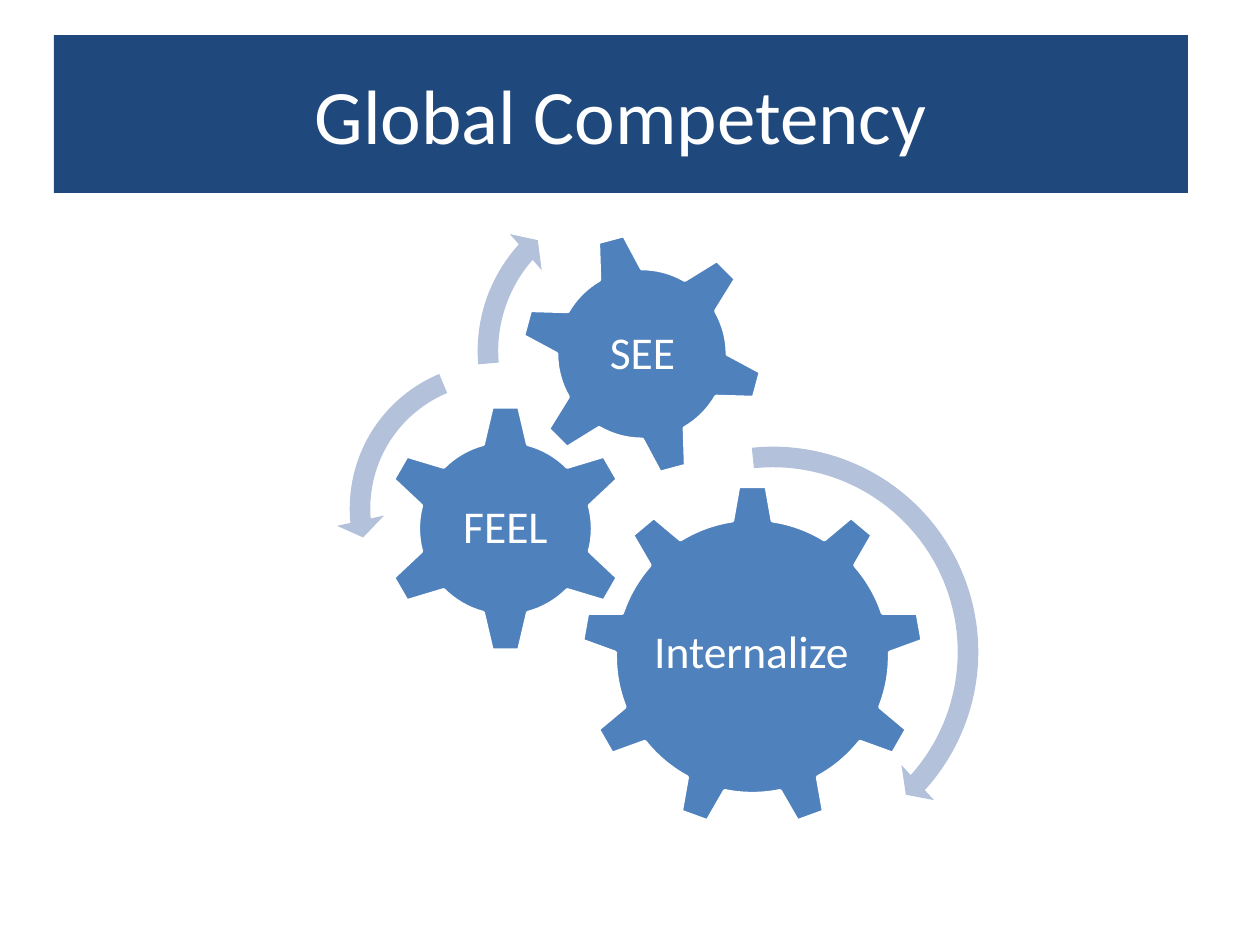
from pptx import Presentation
from pptx.dml.color import RGBColor
from pptx.enum.shapes import MSO_SHAPE as SHAPE
from pptx.enum.text import MSO_ANCHOR as ANCHOR, PP_ALIGN as ALIGN
from pptx.util import Emu, Inches, Pt

PX = Inches(1) // 126
NAVY = RGBColor(0x1F, 0x49, 0x7D)
BLUE = RGBColor(0x4F, 0x81, 0xBD)
PALE = RGBColor(0xB3, 0xC1, 0xDB)
WHITE = RGBColor(0xFF, 0xFF, 0xFF)

# Gear: shape, rotation, left, top, size, label, label box inside the gear
GEARS = [
    (SHAPE.GEAR_9, 0, 245, 306, 343, "Internalize", (68, 81, 205, 176)),
    (SHAPE.GEAR_6, 0, 45, 225, 249, "FEEL", (63, 63, 123, 123)),
    (SHAPE.GEAR_6, 345, 184, 53, 244, "SEE", (54, 54, 137, 137)),
]
# Arrow: shape, left, top, size, adjustments
ARROWS = [
    (SHAPE.CIRCULAR_ARROW, 218, 254, 438, (0.0469, 2.99, 25.236, 158.454, 0.0547)),
    (SHAPE.LEFT_CIRCULAR_ARROW, 0, 170, 319, (0.0645, 4.3, 104.891, 148.378, 0.0753)),
    (SHAPE.CIRCULAR_ARROW, 128, 0, 344, (0.0598, 3.941, 133.138, 105.082, 0.0698)),
]


def px(*lengths):
    return [Emu(n * PX) for n in lengths]


def add_shape(s, kind, box, fill):
    sp = s.shapes.add_shape(kind, *px(*box))
    sp.shadow.inherit = False
    sp.fill.solid()
    sp.fill.fore_color.rgb = fill
    sp.line.fill.background()
    return sp


def write(sp, text, size):
    tf = sp.text_frame
    tf.vertical_anchor = ANCHOR.MIDDLE
    p = tf.paragraphs[0]
    p.alignment = ALIGN.CENTER
    r = p.add_run()
    r.text = text
    r.font.name = "Calibri"
    r.font.size = Pt(size)
    r.font.color.rgb = WHITE
    return p


def title_band(s, box, text):
    write(add_shape(s, SHAPE.RECTANGLE, box, NAVY), text, 44)


def gear(s, x, y, size, kind, rotation, label, label_box):
    sp = add_shape(s, kind, (x, y, size, size), BLUE)
    sp.rotation = rotation
    sp.line.color.rgb = WHITE
    sp.line.width = Pt(2)
    # Upright label over the gear
    dx, dy, w, h = label_box
    tb = s.shapes.add_textbox(*px(x + dx, y + dy, w, h))
    tf = tb.text_frame
    tf.word_wrap = False
    tf.margin_left = tf.margin_right = tf.margin_top = tf.margin_bottom = px(5)[0]
    write(tb, label, 26).line_spacing = 0.9


def gear_diagram(s, x, y):
    for kind, rotation, dx, dy, size, label, label_box in GEARS:
        gear(s, x + dx, y + dy, size, kind, rotation, label, label_box)
    # Turning arrows around the gears
    for kind, dx, dy, size, adjustments in ARROWS:
        sp = add_shape(s, kind, (x + dx, y + dy, size, size), PALE)
        for i, value in enumerate(adjustments):
            sp.adjustments[i] = value


def main():
    prs = Presentation()
    prs.slide_width, prs.slide_height = px(1260, 945)
    s = prs.slides.add_slide(prs.slide_layouts[6])
    title_band(s, (54, 35, 1134, 158), "Global Competency")
    gear_diagram(s, 336, 179)
    prs.save("out.pptx")


if __name__ == "__main__":
    main()
